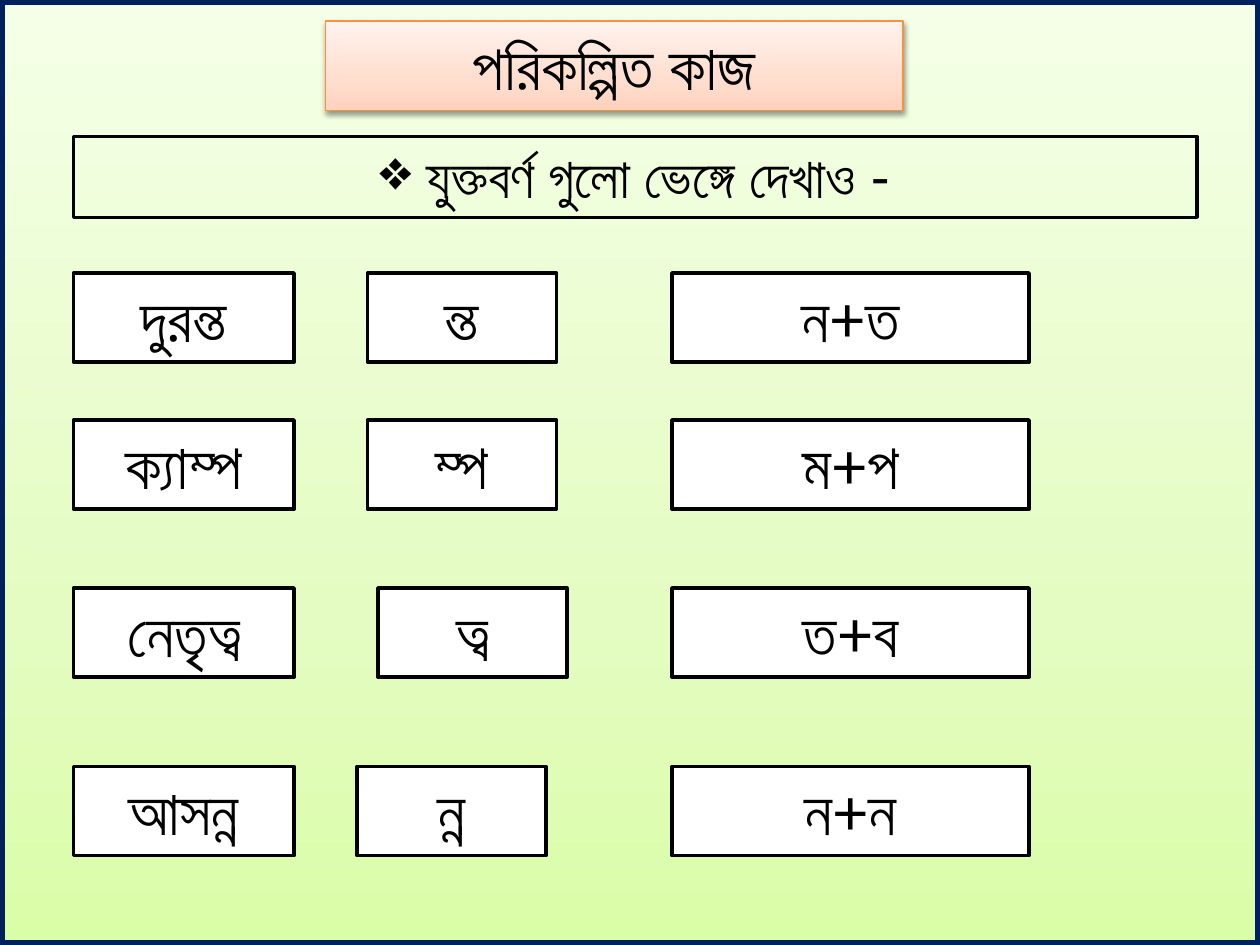
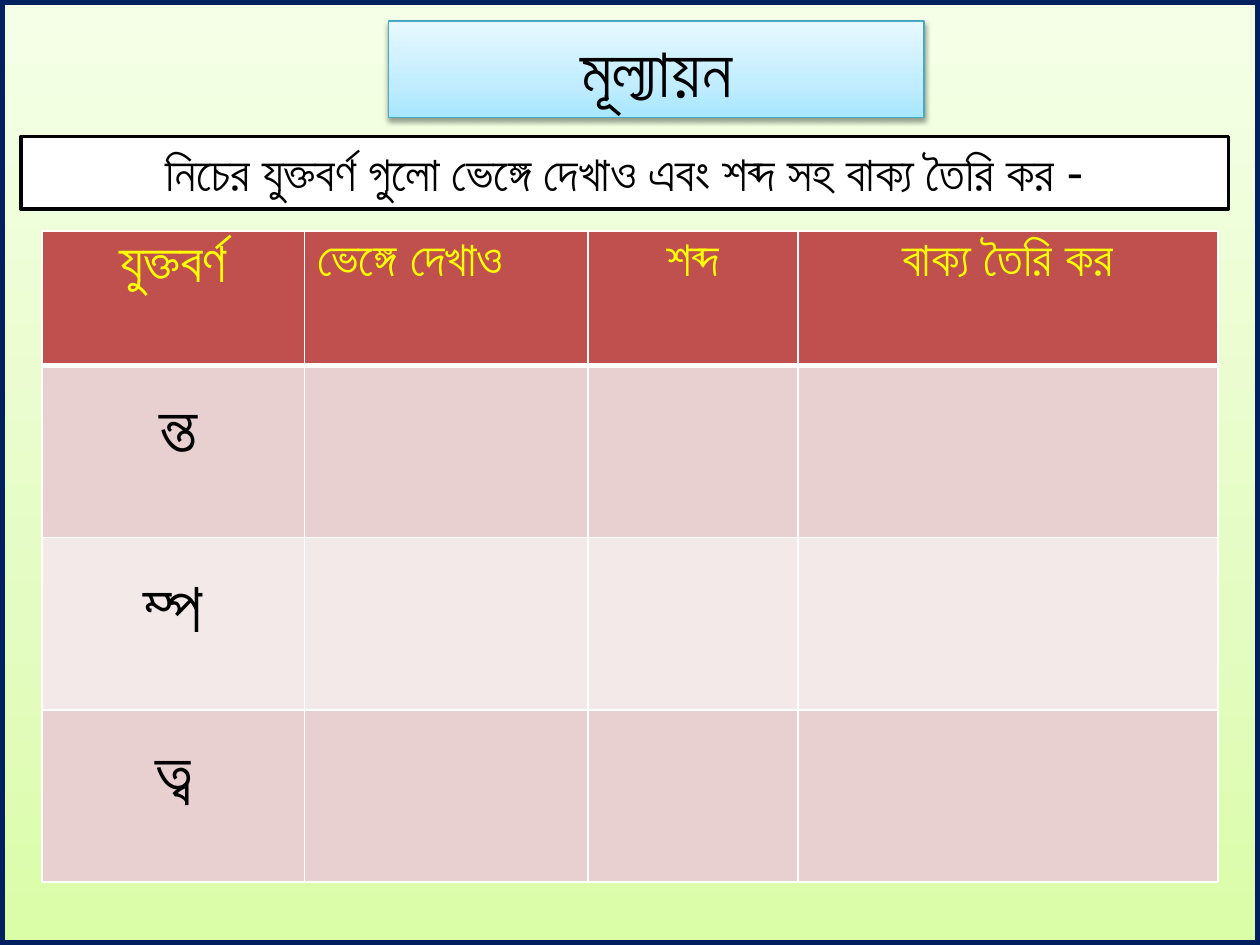
"""Build two Bengali lesson slides: a conjunct drill and an evaluation table."""
import copy
import dataclasses
from typing import Optional

import lxml.etree
import pptx
import pptx.dml.color
import pptx.enum.shapes
import pptx.enum.text
import pptx.oxml.ns
import pptx.util

PX = 7620
WIDE, HIGH = 1200, 900
FONT = "Lato"
HEX = {
    "ink": "000000", "paper": "FFFFFF", "navy": "002060",
    "orange": "F69240", "aqua": "46AAC5", "yellow": "FFFF00",
    "head": "C0504D", "dark": "E8D0D0", "light": "F4E9E9",
}
FADES = {
    "lime": ("DAFDA7", "E4FCC2", "F5FFE7"),
    "peach": ("FFD2BD", "FFDED0", "FFF2ED"),
    "sky": ("A7E6FF", "C1EDFF", "E7F8FF"),
}
STOPS = (0, 0.35, 1)
CENTER = pptx.enum.text.PP_ALIGN.CENTER
LEFT = pptx.enum.text.PP_ALIGN.LEFT


@dataclasses.dataclass
class Box:
    """A framed rectangle, lengths in px and type in points."""
    x: int
    y: int
    w: int
    h: int
    text: str = ""
    size: int = 36
    fill: Optional[str] = "paper"
    line: str = "ink"
    weight: float = 2


@dataclasses.dataclass
class Head:
    """A heading cell of the table with its column width."""
    text: str
    width: int
    size: int = 28
    align: int = CENTER


BACK = Box(0, 0, WIDE, HIGH, fill="lime", line="navy", weight=6)
TASK = Box(70, 130, 1070, 77, "যুক্তবর্ণ গুলো ভেঙ্গে দেখাও -", 32, None)
ORDER = Box(20, 130, 1150, 69,
            "নিচের যুক্তবর্ণ গুলো ভেঙ্গে দেখাও এবং শব্দ সহ বাক্য তৈরি কর -", 28)
DRILLS = [
    (260, 350, "দুরন্ত", "ন্ত", "ন+ত"),
    (400, 350, "ক্যাম্প", "ম্প", "ম+প"),
    (560, 360, "নেতৃত্ব", "ত্ব", "ত+ব"),
    (730, 340, "আসন্ন", "ন্ন", "ন+ন"),
]
HEADS = [
    Head("যুক্তবর্ণ", 250, 32),
    Head("ভেঙ্গে দেখাও", 270, align=LEFT),
    Head("শব্দ", 200),
    Head("বাক্য তৈরি কর", 400),
]
ROWS = (128, 164, 164, 164)
BANDS = ("head", "dark", "light", "dark")
LABELS = [
    Box(60, 360, 220, 92, "ন্ত", 40),
    Box(50, 530, 230, 92, "ম্প", 40),
    Box(50, 690, 230, 92, "ত্ব", 40),
]


def px(*sizes: int) -> list:
    """Turn px into EMU."""
    return [pptx.util.Emu(size * PX) for size in sizes]


def rgb(code: str) -> pptx.dml.color.RGBColor:
    """Turn a hex string into a colour."""
    return pptx.dml.color.RGBColor.from_string(code)


def sub(parent, tag: str, **attrs: object):
    """Append a DrawingML element with attributes."""
    marks = {key: str(value) for key, value in attrs.items()}
    return lxml.etree.SubElement(parent, pptx.oxml.ns.qn(tag), marks)


def style(part, size: int, tint: str = "ink", font: str = FONT,
          bold: bool = False, align: int = CENTER) -> None:
    """Format the first paragraph of a text frame."""
    para = part.paragraphs[0]
    para.alignment = align
    for run in para.runs:
        run.font.size = pptx.util.Pt(size)
        run.font.name = font
        run.font.bold = bold
        run.font.color.rgb = rgb(HEX[tint])


def write(shape, box: Box) -> None:
    """Put centred text that grows its shape."""
    frame = shape.text_frame
    frame.text = box.text
    frame.word_wrap = True
    frame.auto_size = pptx.enum.text.MSO_AUTO_SIZE.SHAPE_TO_FIT_TEXT
    frame.vertical_anchor = pptx.enum.text.MSO_ANCHOR.TOP
    style(frame, box.size)


def fade(shape, tints: tuple) -> None:
    """Fill with a three-stop gradient rising from the bottom."""
    shape.fill.gradient()
    shape.fill.gradient_angle = 90
    stops = shape._element.spPr.find(".//" + pptx.oxml.ns.qn("a:gsLst"))
    stops.append(copy.deepcopy(stops[-1]))
    for stop, place, tint in zip(shape.fill.gradient_stops, STOPS, tints):
        stop.position = place
        stop.color.rgb = rgb(tint)


def shade(shape) -> None:
    """Add a soft shadow below the shape."""
    effects = shape._element.spPr.find(pptx.oxml.ns.qn("a:effectLst"))
    drop = sub(effects, "a:outerShdw", blurRad=40000, dist=20000,
               dir=5400000, rotWithShape=0)
    sub(sub(drop, "a:srgbClr", val=HEX["ink"]), "a:alpha", val=38000)


def draw(slide, box: Box):
    """Draw a framed rectangle with its text."""
    kind = pptx.enum.shapes.MSO_SHAPE.RECTANGLE
    shape = slide.shapes.add_shape(kind, *px(box.x, box.y, box.w, box.h))
    shape.line.color.rgb = rgb(HEX[box.line])
    shape.line.width = pptx.util.Pt(box.weight)
    shape.shadow.inherit = False
    if box.fill in FADES:
        fade(shape, FADES[box.fill])
        shade(shape)
    elif box.fill:
        shape.fill.solid()
        shape.fill.fore_color.rgb = rgb(HEX[box.fill])
    else:
        shape.fill.background()
    if box.text:
        write(shape, box)
    return shape


def bullet(shape, sign: str) -> None:
    """Give the first paragraph a hanging bullet."""
    props = shape.text_frame.paragraphs[0]._p.get_or_add_pPr()
    props.set("marL", "342900")
    props.set("indent", "-342900")
    sub(props, "a:buChar", char=sign)


def edge(cell, row: int) -> None:
    """Rule a cell in white, thick under the heading."""
    props = cell._tc.get_or_add_tcPr()
    thick = {(0, "B"), (1, "T")}
    for side in "LRTB":
        points = 3 if (row, side) in thick else 1
        line = sub(props, "a:ln" + side, w=pptx.util.Pt(points))
        sub(sub(line, "a:solidFill"), "a:srgbClr", val=HEX["paper"])


def grid(slide) -> None:
    """Draw the evaluation table."""
    spot = px(40, 220, sum(head.width for head in HEADS), sum(ROWS))
    table = slide.shapes.add_table(len(ROWS), len(HEADS), *spot).table
    for col, head in zip(table.columns, HEADS):
        col.width = px(head.width)[0]
    for num, (high, band) in enumerate(zip(ROWS, BANDS)):
        table.rows[num].height = px(high)[0]
        for cell in table.rows[num].cells:
            edge(cell, num)
            cell.fill.solid()
            cell.fill.fore_color.rgb = rgb(HEX[band])
    for cell, head in zip(table.rows[0].cells, HEADS):
        cell.text_frame.text = head.text
        style(cell.text_frame, head.size, "yellow", "Calibri", True, head.align)


def start(deck):
    """Add a blank slide with the framed backdrop."""
    slide = deck.slides.add_slide(deck.slide_layouts[6])
    draw(slide, BACK)
    return slide


def drill(deck) -> None:
    """Build the slide that splits conjuncts."""
    slide = start(deck)
    bullet(draw(slide, TASK), "❖")
    draw(slide, Box(310, 20, 550, 85, "পরিকল্পিত কাজ", 36, "peach", "orange", 0.75))
    for y, mid, word, joint, parts in DRILLS:
        for x, w, text in ((70, 210, word), (mid, 180, joint), (640, 340, parts)):
            draw(slide, Box(x, y, w, 85, text))


def review(deck) -> None:
    """Build the evaluation slide."""
    slide = start(deck)
    draw(slide, Box(370, 20, 510, 92, "মূল্যায়ন", 40, "sky", "aqua", 0.75))
    grid(slide)
    for label in LABELS:
        spot = px(label.x, label.y, label.w, label.h)
        write(slide.shapes.add_textbox(*spot), label)
    draw(slide, ORDER)


def main() -> None:
    """Build and save the deck."""
    deck = pptx.Presentation()
    deck.slide_width, deck.slide_height = px(WIDE, HIGH)
    drill(deck)
    review(deck)
    deck.save("out.pptx")


if __name__ == "__main__":
    main()
